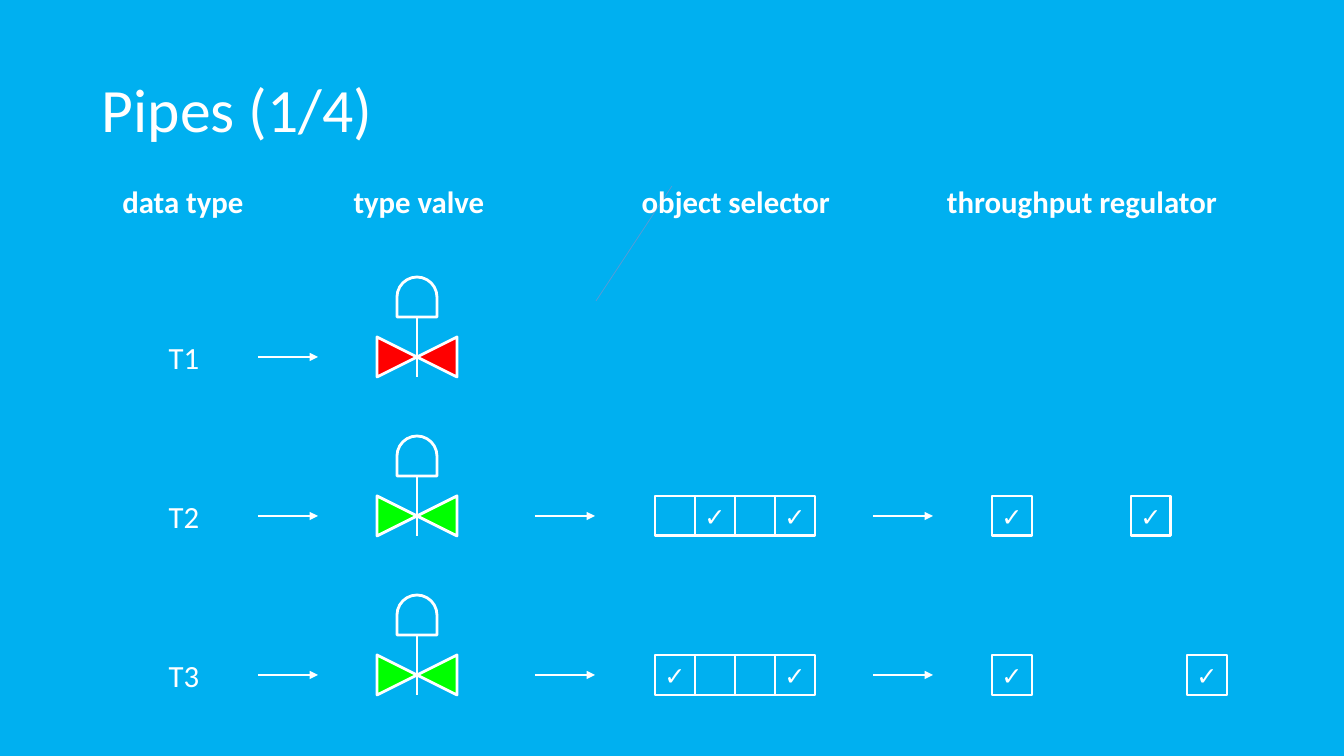
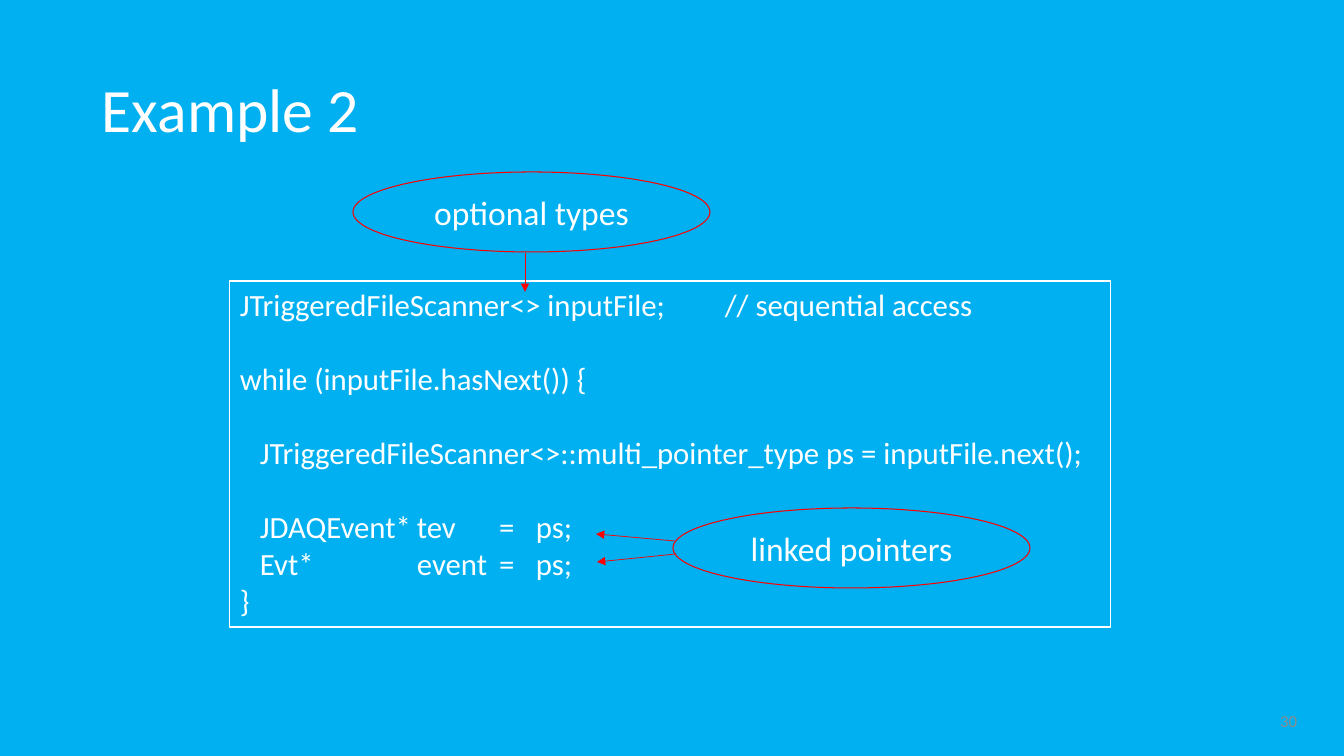
from lxml.etree import SubElement
from pptx import Presentation
from pptx.dml.color import RGBColor
from pptx.enum.shapes import MSO_CONNECTOR, MSO_SHAPE
from pptx.enum.text import MSO_ANCHOR as Anchor, PP_ALIGN as Align
from pptx.oxml.ns import qn
from pptx.util import Pt

WIDTH, HEIGHT = 1344, 756
SCALE = 12192000 / WIDTH
FONT = "Calibri"
COLORS = {
    "background": "00B0F0",
    "text": "FFFFFF",
    "closed": "FF0000",
    "open": "00FF00",
    "accent": "FF0000",
    "guide": "5B9BD5",
    "number": "8C8C8C",
}

CELL = 40
ROW_TOP, ROW_PITCH = 357, 159
ARROW_LENGTH = 60
VALVE_X = 417
SELECTOR_X, SELECTOR_CELLS = 655, 4
CHECK = "✓"
HEADINGS = ["data type", "type valve", "object selector", "throughput regulator"]
HEADING_TABS = [(119, "ctr"), (355, "ctr"), (672, "ctr"), (1018, "ctr")]
ROWS = [
    ("T1", "closed", [], []),
    ("T2", "open", [1, 3], [992, 1131]),
    ("T3", "open", [0, 3], [992, 1187]),
]

CODE_TABS = [(20, "l"), (177, "l"), (267, "ctr"), (296, "l"), (485, "l")]
CODE_GAP = 37
CODE_LINES = [
    ("JTriggeredFileScanner<> inputFile;\t// sequential access", 0),
    ("while (inputFile.hasNext()) {", CODE_GAP),
    ("\tJTriggeredFileScanner<>::multi_pointer_type ps = inputFile.next();", CODE_GAP),
    ("\tJDAQEvent*\ttev\t=\tps;", CODE_GAP),
    ("\tEvt*\tevent\t=\tps;", 0),
    ("}", 0),
]


def px(value):
    return round(value * SCALE)


def color(name):
    return RGBColor.from_string(COLORS[name])


def style_paragraph(para, size, tint="text", bold=False, align=Align.LEFT):
    para.alignment = align
    for span in para.runs:
        span.font.name = FONT
        span.font.size = Pt(size)
        span.font.bold = bold
        span.font.color.rgb = color(tint)


def set_tabs(para, tabs):
    tab_list = SubElement(para._p.get_or_add_pPr(), qn("a:tabLst"))
    for position, align in tabs:
        SubElement(tab_list, qn("a:tab"), pos=str(px(position)), algn=align)


def add_text(page, left, top, width, height, text, size, anchor=Anchor.TOP, **style):
    box = page.shapes.add_textbox(px(left), px(top), px(width), px(height))
    frame = box.text_frame
    frame.word_wrap = True
    frame.vertical_anchor = anchor
    frame.text = text
    para = frame.paragraphs[0]
    style_paragraph(para, size, **style)
    return para


def add_outline(page, kind, left, top, width, height, line="text", weight=2, fill=None):
    shape = page.shapes.add_shape(kind, px(left), px(top), px(width), px(height))
    shape.shadow.inherit = False
    if fill:
        shape.fill.solid()
        shape.fill.fore_color.rgb = color(fill)
    else:
        shape.fill.background()
    shape.line.color.rgb = color(line)
    shape.line.width = Pt(weight)
    return shape


def add_label(shape, text, size):
    frame = shape.text_frame
    frame.margin_left = frame.margin_right = frame.margin_top = frame.margin_bottom = 0
    frame.vertical_anchor = Anchor.MIDDLE
    frame.text = text
    style_paragraph(frame.paragraphs[0], size, align=Align.CENTER)


def add_line(page, start, end, tint="text", weight=2, arrow=False):
    line = page.shapes.add_connector(
        MSO_CONNECTOR.STRAIGHT, *[px(value) for value in (*start, *end)]
    )
    line.line.color.rgb = color(tint)
    line.line.width = Pt(weight)
    properties = line.element.spPr
    if arrow:
        SubElement(properties.find(qn("a:ln")), qn("a:tailEnd"), type="triangle")
    SubElement(properties, qn("a:effectLst"))


def add_page(deck, title):
    page = deck.slides.add_slide(deck.slide_layouts[6])
    page.background.fill.solid()
    page.background.fill.fore_color.rgb = color("background")
    para = add_text(page, 92, 40, 1159, 146, title, 44, anchor=Anchor.MIDDLE)
    para.line_spacing = 0.9
    return page


def add_flow_arrow(page, left, y):
    add_line(page, (left, y), (left + ARROW_LENGTH, y), arrow=True)


def add_valve(page, y, fill):
    left = VALVE_X - CELL / 2
    body = add_outline(
        page, MSO_SHAPE.FLOWCHART_COLLATE, left, y - CELL, CELL, 2 * CELL, fill=fill
    )
    body.rotation = 90
    add_line(page, (VALVE_X, y - CELL), (VALVE_X, y + CELL / 2))
    cap = add_outline(page, MSO_SHAPE.FLOWCHART_DELAY, left, y - 2 * CELL, CELL, CELL)
    cap.rotation = 270


def add_cell(page, left, y, checked=True):
    cell = add_outline(page, MSO_SHAPE.RECTANGLE, left, y - CELL / 2, CELL, CELL)
    if checked:
        add_label(cell, CHECK, 18)


def add_pipe(page, y, name, valve, selected, regulated):
    add_text(page, 144, y - 23, 80, 47, name, 22, align=Align.CENTER)
    add_flow_arrow(page, 258, y)
    add_valve(page, y, valve)
    if valve == "closed":
        return
    add_flow_arrow(page, 535, y)
    for index in range(SELECTOR_CELLS):
        add_cell(page, SELECTOR_X + index * CELL, y, index in selected)
    add_flow_arrow(page, 873, y)
    for left in regulated:
        add_cell(page, left, y)


def add_callout(page, left, top, text):
    ellipse = add_outline(
        page, MSO_SHAPE.OVAL, left, top, 357, 80, line="accent", weight=0.75
    )
    add_label(ellipse, text, 24)


def add_code(page):
    box = add_outline(page, MSO_SHAPE.RECTANGLE, 230, 281, 881, 346, weight=0.75)
    frame = box.text_frame
    frame.word_wrap = True
    frame.vertical_anchor = Anchor.TOP
    frame.text = "\n".join(text for text, gap in CODE_LINES)
    for para, (text, gap) in zip(frame.paragraphs, CODE_LINES):
        style_paragraph(para, 22)
        para.space_before = px(gap)
        set_tabs(para, CODE_TABS)


def build_pipes(deck):
    page = add_page(deck, "Pipes (1/4)")
    add_line(page, (596, 301), (672, 186), tint="guide", weight=0.5)
    text = "".join("\t" + heading for heading in HEADINGS)
    headings = add_text(page, 54, 178, 1242, 47, text, 22, bold=True)
    set_tabs(headings, HEADING_TABS)
    for index, row in enumerate(ROWS):
        add_pipe(page, ROW_TOP + index * ROW_PITCH, *row)


def build_example(deck):
    page = add_page(deck, "Example 2")
    add_text(
        page, 1005, 701, 302, 40, "30", 12,
        anchor=Anchor.MIDDLE, tint="number", align=Align.RIGHT,
    )
    add_code(page)
    add_callout(page, 353, 172, "optional types")
    add_callout(page, 673, 508, "linked pointers")
    pointers = [
        ((525, 253), (525, 292)),
        ((676, 554), (597, 562)),
        ((675, 541), (596, 534)),
    ]
    for start, end in pointers:
        add_line(page, start, end, tint="accent", weight=0.5, arrow=True)


def main():
    deck = Presentation()
    deck.slide_width, deck.slide_height = px(WIDTH), px(HEIGHT)
    build_pipes(deck)
    build_example(deck)
    deck.save("out.pptx")


if __name__ == "__main__":
    main()
